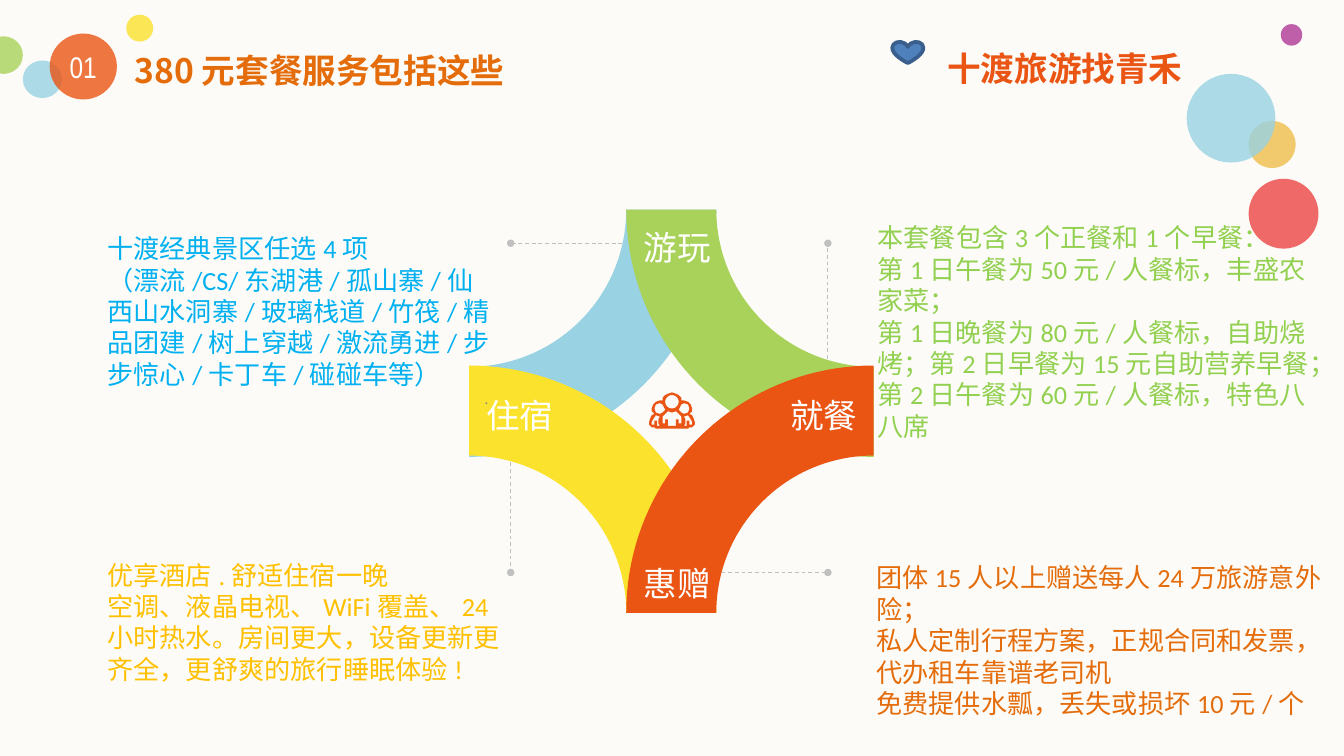
"""Build the travel package slide: four interlocking arcs with service notes."""
from dataclasses import dataclass
from math import cos, pi, sin

from lxml.etree import SubElement
from pptx import Presentation
from pptx.dml.color import RGBColor
from pptx.enum.dml import MSO_LINE
from pptx.enum.shapes import MSO_CONNECTOR, MSO_SHAPE
from pptx.enum.text import MSO_ANCHOR, MSO_AUTO_SIZE, PP_ALIGN
from pptx.oxml.ns import qn
from pptx.util import Inches, Pt

COLORS = {
    "paper": "FCFBF7", "white": "FFFFFF", "grey": "7F7F7F", "rule": "C0C0C0",
    "blue": "98D2E3", "yellow": "FBE22D", "green": "A9D25A", "orange": "EA5514",
    "purple": "B03896", "gold": "F0CA6C", "red": "EB4544",
    "heart": "4F81BD", "heart edge": "3A5F8C",
    "lime text": "92D050", "sky text": "00B0F0", "amber text": "FFC000", "rust text": "E46C0A",
}
LEFT, RIGHT, TOP, BOTTOM = 3.49, 6.5, 1.56, 4.56
OUTER, INNER = 1.84, 1.17
ARC_STEPS = 40
Points = list[tuple[float, float]]


@dataclass
class Petal:
    x: float
    y: float
    color: str


@dataclass
class Bubble:
    x: float
    y: float
    w: float
    h: float
    color: str
    alpha: int = 80


@dataclass
class Text:
    x: float
    y: float
    w: float
    h: float
    color: str
    lines: list[str]
    size: int = 14
    font: str = "Calibri"
    bold: bool = False
    align: PP_ALIGN = PP_ALIGN.LEFT
    inset: bool = False
    wrap: bool = True


@dataclass
class Leader:
    x1: float
    y1: float
    x2: float
    y2: float


PETALS = [
    Petal(LEFT, TOP, "blue"), Petal(LEFT, BOTTOM, "yellow"),
    Petal(RIGHT, TOP, "green"), Petal(RIGHT, BOTTOM, "orange"),
]
CROWD_EDGE = [
    (0, 2.92), (0.03, 2.93), (0.05, 2.94), (0.07, 2.96), (0.07, 2.98), (0.09, 2.98), (0.12, 2.99),
    (0.14, 3.01), (0.15, 3.04), (0.15, 3.06), (0.13, 3.08), (0.15, 3.09), (0.16, 3.11), (0.17, 3.14),
    (0.17, 3.16), (0.15, 3.18), (0.13, 3.18), (0.12, 3.19), (0, 3.19),
]
FRONT_BODY = [
    (0, 3.07), (0.03, 3.06), (0.06, 3.09), (0.07, 3.1), (0.07, 3.15), (0.05, 3.15),
    (0.05, 3.12), (0.03, 3.12), (0.03, 3.17), (0, 3.17),
]
SIDE_HEAD = [
    (0.07, 3.01), (0.09, 3), (0.12, 3.01), (0.13, 3.04), (0.12, 3.07), (0.09, 3.08), (0.07, 3.07), (0.05, 3.05),
]
SIDE_BODY = [
    (0.09, 3.1), (0.12, 3.09), (0.14, 3.12), (0.15, 3.14), (0.15, 3.16), (0.13, 3.16),
    (0.13, 3.13), (0.11, 3.13), (0.11, 3.17), (0.09, 3.17), (0.1, 3.15), (0.1, 3.12),
]
LEADERS = [
    Leader(4.63, 1.81, 3.8, 1.81), Leader(3.8, 3.44, 3.8, 4.26),
    Leader(5.37, 4.26, 6.16, 4.26), Leader(6.16, 2.67, 6.16, 1.81),
]
BUBBLES = [
    Bubble(0.94, 0.11, 0.2, 0.2, "yellow"), Bubble(-0.12, 0.27, 0.29, 0.28, "green"),
    Bubble(0.17, 0.45, 0.29, 0.28, "blue"), Bubble(0.37, 0.25, 0.5, 0.49, "orange"),
    Bubble(9.53, 0.18, 0.16, 0.16, "purple"), Bubble(9.29, 0.9, 0.35, 0.35, "gold", 100),
    Bubble(9.29, 1.33, 0.52, 0.52, "red"), Bubble(8.83, 0.55, 0.66, 0.66, "blue"),
]
NOTES = [
    Text(6.53, 1.65, 3.34, 1.18, "lime text", [
        "本套餐包含3个正餐和1个早餐：",
        "第1日午餐为50元/人餐标，丰盛农家菜；",
        "第1日晚餐为80元/人餐标，自助烧烤；第2日早餐为15元自助营养早餐；",
        "第2日午餐为60元/人餐标，特色八八席"]),
    Text(6.52, 4.18, 3.48, 1.18, "rust text", [
        "团体15人以上赠送每人24万旅游意外险；",
        "私人定制行程方案，正规合同和发票，代办租车靠谱老司机",
        "免费提供水瓢，丢失或损坏10元/个"]),
    Text(0.8, 4.16, 3, 0.94, "amber text", [
        "优享酒店.舒适住宿一晚",
        "空调、液晶电视、WiFi覆盖、24小时热水。房间更大，设备更新更齐全，更舒爽的旅行睡眠体验!"]),
]
SIGHTS = Text(0.8, 1.73, 2.86, 1.31, "sky text", [
    "十渡经典景区任选4项",
    "（漂流/CS/东湖港/孤山寨/仙西山水洞寨/玻璃栈道/竹筏/精品团建/树上穿越/激流勇进/步步惊心/卡丁车/碰碰车等）",
    ". "])
TITLE = Text(1, 0.37, 3.04, 0.3, "rust text", ["380元套餐服务包括这些"], 18, "Noto Sans CJK JP", True)
NUMBER = Text(0.44, 0.36, 0.36, 0.27, "white", ["01"], 16, "Arial Narrow", align=PP_ALIGN.CENTER)
SLOGAN = Text(6.95, 0.31, 2.03, 0.4, "orange", ["十渡旅游找青禾"], 18, bold=True, inset=True, wrap=False)
LABELS = [
    Text(x, y, 0.71, 0.4, "white", [word], 18, inset=True, wrap=False)
    for x, y, word in [(4.69, 1.64, "游玩"), (5.78, 2.89, "就餐"), (3.52, 2.89, "住宿"), (4.69, 4.14, "惠赠")]
]


def rgb(name: str) -> RGBColor:
    return RGBColor.from_string(COLORS[name])


def fill_text(sp, t: Text) -> None:
    sp.left, sp.top, sp.width, sp.height = map(Inches, (t.x, t.y, t.w, t.h))
    tf = sp.text_frame
    tf.word_wrap, tf.vertical_anchor = t.wrap, MSO_ANCHOR.TOP
    tf.auto_size = MSO_AUTO_SIZE.SHAPE_TO_FIT_TEXT
    if not t.inset:
        tf.margin_left = tf.margin_top = tf.margin_right = tf.margin_bottom = 0
    for i, line in enumerate(t.lines):
        p = tf.paragraphs[0] if i == 0 else tf.add_paragraph()
        p.text, p.alignment = line, t.align
        p.font.name, p.font.size, p.font.bold = t.font, Pt(t.size), t.bold
        p.font.color.rgb = rgb(t.color)


def add_text(s, t: Text):
    sp = s.shapes.add_textbox(0, 0, Inches(t.w), Inches(t.h))
    fill_text(sp, t)
    return sp


def paint(sp, fill: str) -> None:
    sp.shadow.inherit = False
    sp.fill.solid()
    sp.fill.fore_color.rgb = rgb(fill)
    sp.line.fill.background()


def add_bubble(s, b: Bubble) -> None:
    sp = s.shapes.add_shape(MSO_SHAPE.OVAL, *map(Inches, (b.x, b.y, b.w, b.h)))
    paint(sp, b.color)
    if b.alpha < 100:
        clr = sp._element.spPr.find(qn("a:solidFill"))[0]
        SubElement(clr, qn("a:alpha")).set("val", str(b.alpha * 1000))


def add_outline(s, contours: list[Points], color: str) -> None:
    loops = [[(Inches(x), Inches(y)) for x, y in loop] for loop in contours]
    fb = s.shapes.build_freeform(*loops[0][0])
    for i, loop in enumerate(loops):
        if i:
            fb.move_to(*loop[0])
        fb.add_line_segments(loop[1:])
    paint(fb.convert_to_shape(), color)


def add_petal(s, petal: Petal) -> None:
    dx = 1 if petal.x == LEFT else -1
    dy = 1 if petal.y == TOP else -1
    angles = [pi / 2 * i / ARC_STEPS for i in range(ARC_STEPS + 1)]
    rim = [(OUTER, a) for a in angles] + [(INNER, a) for a in reversed(angles)]
    add_outline(s, [[(petal.x + dx * r * cos(a), petal.y + dy * r * sin(a)) for r, a in rim]], petal.color)


def flip(pts: Points) -> Points:
    return [(-x, y) for x, y in reversed(pts)]


def add_people(s) -> None:
    angles = [2 * pi * i / ARC_STEPS for i in range(ARC_STEPS)]
    head = [(0.05 * cos(a), 2.99 + 0.05 * sin(a)) for a in angles]
    loops = [half + flip(half) for half in (CROWD_EDGE, FRONT_BODY)] + [head]
    for part in (SIDE_HEAD, SIDE_BODY):
        loops += [part, flip(part)]
    add_outline(s, [[(5 + x, y) for x, y in loop] for loop in loops], "orange")


def add_leader(s, ln: Leader) -> None:
    c = s.shapes.add_connector(MSO_CONNECTOR.STRAIGHT, *map(Inches, (ln.x1, ln.y1, ln.x2, ln.y2)))
    c.line.color.rgb, c.line.width = rgb("rule"), Pt(0.5)
    c.line.dash_style = MSO_LINE.DASH
    end = SubElement(c.line._get_or_add_ln(), qn("a:tailEnd"))
    for key, val in {"type": "oval", "w": "sm", "len": "sm"}.items():
        end.set(key, val)
    SubElement(c._element.spPr, qn("a:effectLst"))


def main() -> None:
    prs = Presentation()
    prs.slide_width, prs.slide_height = Inches(10), Inches(10 * 9 / 16)
    s = prs.slides.add_slide(prs.slide_layouts[5])
    s.background.fill.solid()
    s.background.fill.fore_color.rgb = rgb("paper")
    fill_text(s.shapes.title, TITLE)
    for petal in PETALS:
        add_petal(s, petal)
    add_people(s)
    for ln in LEADERS:
        add_leader(s, ln)
    for t in NOTES:
        add_text(s, t)
    dot = add_text(s, SIGHTS).text_frame.paragraphs[-1]
    dot.alignment, dot.font.size = PP_ALIGN.RIGHT, Pt(8)
    dot.font.color.rgb = rgb("grey")
    for b in BUBBLES:
        add_bubble(s, b)
    for t in [NUMBER, *LABELS, SLOGAN]:
        add_text(s, t)
    heart = s.shapes.add_shape(MSO_SHAPE.HEART, *map(Inches, (6.64, 0.31, 0.23, 0.16)))
    paint(heart, "heart")
    heart.line.color.rgb, heart.line.width = rgb("heart edge"), Pt(2)
    prs.save("out.pptx")


if __name__ == "__main__":
    main()
